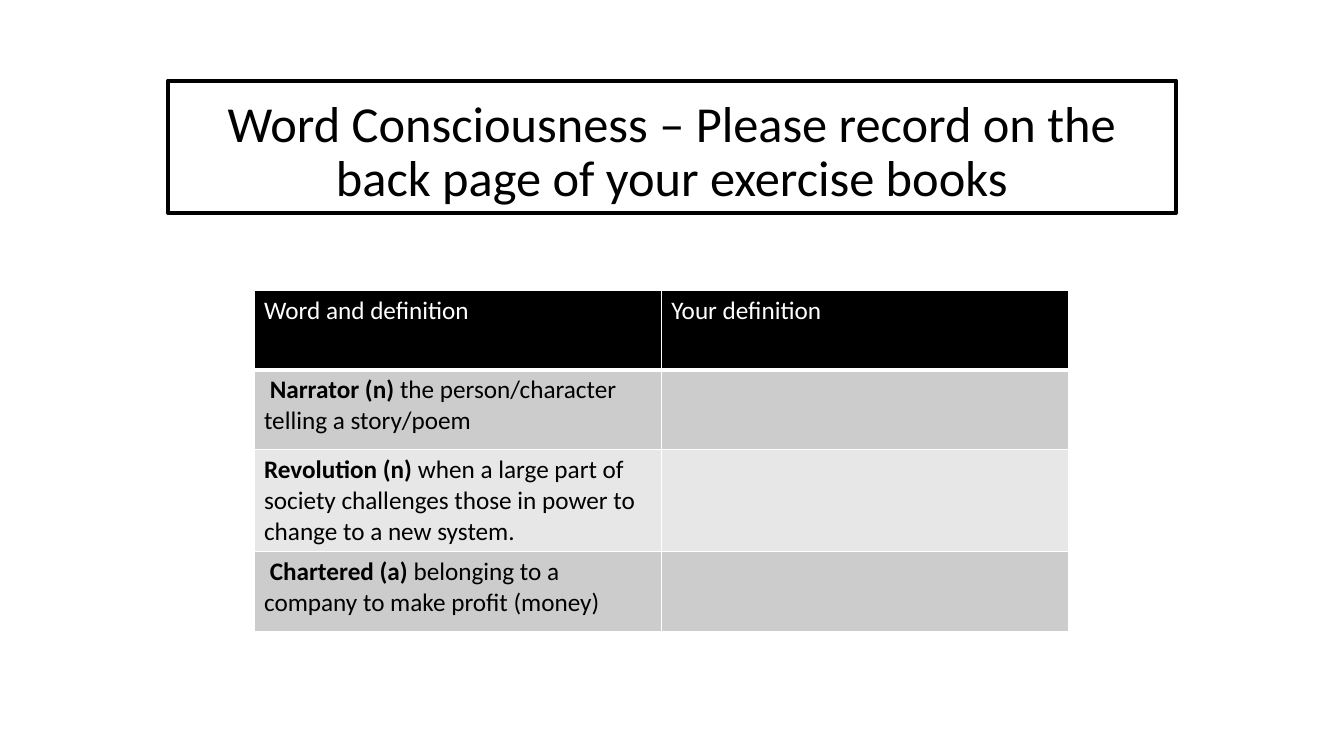
from lxml import etree
from pptx import Presentation
from pptx.dml.color import RGBColor
from pptx.enum.text import MSO_ANCHOR, MSO_AUTO_SIZE, PP_ALIGN
from pptx.oxml.ns import qn
from pptx.util import Inches, Pt

BOTTOM = MSO_ANCHOR.BOTTOM
NO_FIT = MSO_AUTO_SIZE.NONE
CENTER = PP_ALIGN.CENTER

TITLE = "Word Consciousness – Please record on the back page of your exercise books"
TITLE_BOX = (12.5, 10.67, 75, 17.47)
TABLE_BOX = (18.9, 38.4, 60.61, 42.13)
HEADINGS = ("Word and definition", "Your definition")
DEFINITIONS = (
    (" Narrator (n) ", "the person/character telling a story/poem"),
    ("Revolution (n) ", "when a large part of society challenges those in power "
                        "to change to a new system."),
    (" Chartered (a) ", "belonging to a company to make profit (money)"),
)
BAND_FILLS = ("CCCCCC", "E7E7E7")


def color(value):
    return RGBColor.from_string(value)


class SlideBuilder:
    """Draws styled elements on one slide, placed in percent of its size."""

    font_name = "Calibri"
    black = "000000"
    white = "FFFFFF"

    def __init__(self, presentation):
        self.presentation = presentation
        self.slide = presentation.slides.add_slide(presentation.slide_layouts[5])

    def place(self, box):
        sizes = (self.presentation.slide_width, self.presentation.slide_height) * 2
        return [round(size * share / 100) for size, share in zip(sizes, box)]

    def run(self, paragraph, text, ink, size, bold=False):
        run = paragraph.add_run()
        run.text = text
        formats = {"name": self.font_name, "size": Pt(size), "bold": bold}
        for name, value in formats.items():
            setattr(run.font, name, value)
        run.font.color.rgb = color(ink)

    def title(self, text, box):
        shape = self.slide.shapes.title
        for name, value in zip(("left", "top", "width", "height"), self.place(box)):
            setattr(shape, name, value)
        shape.fill.solid()
        shape.fill.fore_color.rgb = color(self.white)
        solid_color = shape.fill._xPr.find(qn("a:solidFill"))[0]
        etree.SubElement(solid_color, qn("a:alpha"), val="64000")
        shape.line.color.rgb = color(self.black)
        shape.line.width = Pt(3)
        frame_formats = {"vertical_anchor": BOTTOM, "auto_size": NO_FIT, "word_wrap": True}
        for name, value in frame_formats.items():
            setattr(shape.text_frame, name, value)
        paragraph = shape.text_frame.paragraphs[0]
        for name, value in {"alignment": CENTER, "line_spacing": 0.9}.items():
            setattr(paragraph, name, value)
        self.run(paragraph, text, self.black, 36)

    def cell(self, cell, parts, fill, ink, bottom_width=1):
        properties = cell._tc.get_or_add_tcPr()
        widths = {"lnL": 1, "lnR": 1, "lnT": 1, "lnB": bottom_width}
        for side, width in widths.items():
            border = etree.SubElement(properties, qn(f"a:{side}"), w=str(Pt(width)))
            solid = etree.SubElement(border, qn("a:solidFill"))
            etree.SubElement(solid, qn("a:srgbClr"), val=self.white)
        cell.fill.solid()
        cell.fill.fore_color.rgb = color(fill)
        paragraph = cell.text_frame.paragraphs[0]
        for text, bold in parts:
            self.run(paragraph, text, ink, 18, bold)

    def table(self, headings, definitions, box):
        table = self.slide.shapes.add_table(
            len(definitions) + 1, len(headings), *self.place(box)).table
        for column, heading in enumerate(headings):
            self.cell(table.cell(0, column), [(heading, False)],
                      self.black, self.white, bottom_width=3)
        for row, (word, meaning) in enumerate(definitions, start=1):
            fill = BAND_FILLS[(row - 1) % len(BAND_FILLS)]
            self.cell(table.cell(row, 0), [(word, True), (meaning, False)], fill, self.black)
            self.cell(table.cell(row, 1), [], fill, self.black)


def main():
    presentation = Presentation()
    presentation.slide_width = Inches(13.33)
    presentation.slide_height = Inches(7.5)
    builder = SlideBuilder(presentation)
    builder.title(TITLE, TITLE_BOX)
    builder.table(HEADINGS, DEFINITIONS, TABLE_BOX)
    presentation.save("out.pptx")


if __name__ == "__main__":
    main()
